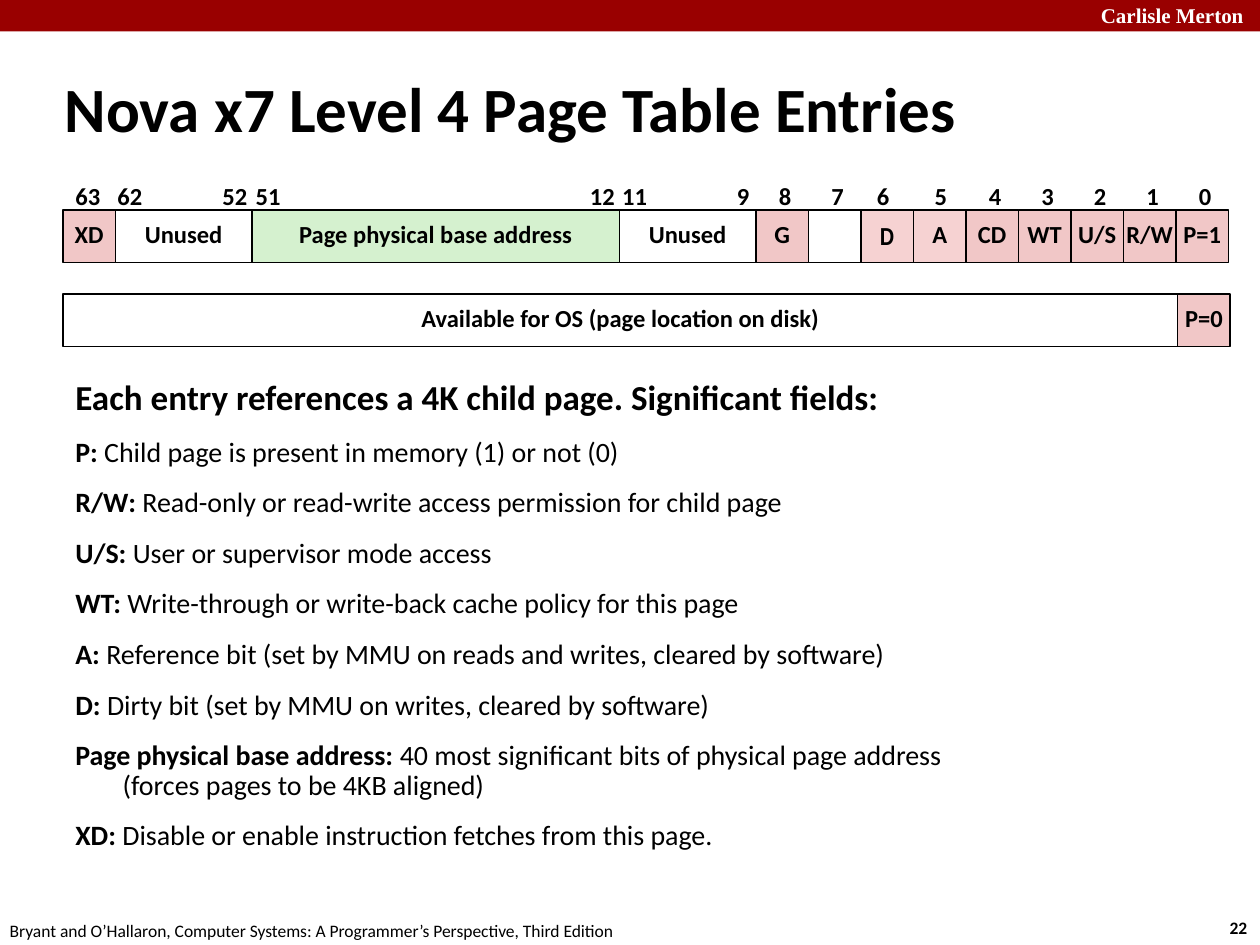
"""Build a slide that explains the fields of a level 4 page table entry."""
from dataclasses import dataclass

import pptx
import pptx.dml.color
import pptx.enum.shapes
import pptx.enum.text
import pptx.util

Pt = pptx.util.Pt
ALIGN = pptx.enum.text.PP_ALIGN
ANCHOR = pptx.enum.text.MSO_ANCHOR
AUTO_SIZE = pptx.enum.text.MSO_AUTO_SIZE


@dataclass(frozen=True)
class Theme:
    """Colours, fonts and type sizes of the slide."""
    banner: str = "990000"
    ink: str = "000000"
    paper: str = "FFFFFF"
    flag: str = "F1C7C7"
    status: str = "F6D2D2"
    address: str = "D5F1CF"
    font: str = "Calibri"
    banner_font: str = "Times New Roman"
    narrow_font: str = "Arial Narrow"
    title: int = 36
    heading: int = 20
    body: int = 16
    label: int = 14
    banner_size: int = 12
    footer: int = 10


THEME = Theme()
LEFT = 36
UNIT = 30
ENTRY_TOP = 120
DISK_TOP = 168
LABEL_TOP = 102
TIGHT = {"line": 0.88, "before": 5.2}

ENTRY_FIELDS = [
    ("XD", 30, THEME.flag),
    ("Unused", 78, THEME.paper),
    ("Page physical base address", 210, THEME.address),
    ("Unused", 78, THEME.paper),
    ("G", 30, THEME.flag),
    ("", 30, THEME.paper),
    ("D", 30, THEME.status),
    ("A", 30, THEME.status),
    ("CD", 30, THEME.flag),
    ("WT", 30, THEME.flag),
    ("U/S", 30, THEME.flag),
    ("R/W", 30, THEME.flag),
    ("P=1", 30, THEME.flag),
]
DISK_FIELDS = [
    ("Available for OS (page location on disk)", 637, THEME.paper),
    ("P=0", 30, THEME.flag),
]
WIDE_BITS = {63: 36, 62: 60, 52: 120, 51: 139, 12: 330, 11: 348.5}
LOW_BITS = {bit: 438 + UNIT * (8 - bit) for bit in range(8, -1, -1)}
BIT_LEFTS = WIDE_BITS | LOW_BITS | {9: 414, 6: 494, 5: 527}

HEADING = "Each entry references a 4K child page. Significant fields:"
DEFINITIONS = [
    ("P:", "Child page is present in memory (1) or not (0)"),
    ("R/W:", "Read-only or read-write access permission for child page"),
    ("U/S:", "User or supervisor mode access"),
    ("WT:", "Write-through or write-back cache policy for this page"),
    ("A:", "Reference bit (set by MMU on reads and writes, cleared by software)"),
    ("D:", "Dirty bit (set by MMU on writes, cleared by software)"),
    ("Page physical base address:",
     "40 most significant bits of physical page address (forces pages to be 4KB aligned)"),
    ("XD:", "Disable or enable instruction fetches from this page."),
]


def rgb(color):
    """Turn a hex string into a colour object."""
    return pptx.dml.color.RGBColor.from_string(color)


def write_span(para, text, *, size, bold=True, font=THEME.font, color=THEME.ink):
    """Add formatted text to a paragraph."""
    span = para.add_run()
    span.text = text
    span.font.size = Pt(size)
    span.font.bold = bold
    span.font.name = font
    span.font.color.rgb = rgb(color)


def format_para(para, *, align=ALIGN.LEFT, line=None, before=None, hanging=0):
    """Set the alignment, spacing and hanging indent of a paragraph."""
    para.alignment = align
    if line is not None:
        para.line_spacing = line
    if before is not None:
        para.space_before = Pt(before)
    if hanging:
        properties = para._p.get_or_add_pPr()
        properties.set("marL", str(Pt(hanging)))
        properties.set("indent", str(-Pt(hanging)))


def add_box(page, left, top, width, height, *, wrap=False, grow=True):
    """Add an empty text box and return its text frame."""
    frame = page.shapes.add_textbox(Pt(left), Pt(top), Pt(width), Pt(height)).text_frame
    frame.word_wrap = wrap
    frame.auto_size = AUTO_SIZE.SHAPE_TO_FIT_TEXT if grow else AUTO_SIZE.NONE
    return frame


def add_rectangle(page, left, top, width, height, fill, outlined=True):
    """Add a filled rectangle, with a thin outline if asked."""
    shape = page.shapes.add_shape(
        pptx.enum.shapes.MSO_SHAPE.RECTANGLE, Pt(left), Pt(top), Pt(width), Pt(height))
    shape.shadow.inherit = False
    shape.fill.solid()
    shape.fill.fore_color.rgb = rgb(fill)
    if outlined:
        shape.line.color.rgb = rgb(THEME.ink)
        shape.line.width = Pt(0.75)
    else:
        shape.line.fill.background()
    return shape


def add_field_row(page, top, fields):
    """Lay the fields of an entry side by side."""
    left = LEFT
    for name, width, fill in fields:
        frame = add_rectangle(page, left, top, width, UNIT, fill).text_frame
        left += width
        if not name:
            continue
        frame.word_wrap = False
        frame.vertical_anchor = ANCHOR.MIDDLE
        para = frame.paragraphs[0]
        dirty = name == "D"
        format_para(para, align=ALIGN.CENTER, **({} if dirty else TIGHT))
        write_span(para, name, size=THEME.label,
                   font=THEME.narrow_font if dirty else THEME.font)


def add_bit_labels(page):
    """Write the bit numbers above the entry."""
    for bit, left in BIT_LEFTS.items():
        width = 28.8 if bit > 9 else 21.6
        para = add_box(page, left, LABEL_TOP, width, 22).paragraphs[0]
        format_para(para, **TIGHT)
        write_span(para, str(bit), size=THEME.label)


def add_definitions(page):
    """List the meaning of each significant field."""
    frame = add_box(page, LEFT, 214, 546, 279, wrap=True)
    spacing = {"line": 0.88, "before": 12, "hanging": 27}
    para = frame.paragraphs[0]
    format_para(para, **spacing)
    write_span(para, HEADING, size=THEME.heading)
    for term, meaning in DEFINITIONS:
        para = frame.add_paragraph()
        format_para(para, **spacing)
        write_span(para, f"{term} ", size=THEME.body)
        write_span(para, meaning, size=THEME.body, bold=False)


def add_frame(page):
    """Add the banner, the footer and the title."""
    add_rectangle(page, 0, 0, 720, 18, THEME.banner, outlined=False)
    banner = add_box(page, 622, -2, 103, 22, wrap=True)
    write_span(banner.paragraphs[0], "Carlisle Merton", size=THEME.banner_size,
               font=THEME.banner_font, color=THEME.paper)
    number = add_box(page, 695.5, 520.5, 27, 19.5)
    write_span(number.paragraphs[0], "22", size=THEME.footer)
    source = add_box(page, -1.5, 522, 366, 19.5)
    write_span(source.paragraphs[0],
               "Bryant and O’Hallaron, Computer Systems: A Programmer’s Perspective, Third Edition",
               size=THEME.footer, bold=False)
    title = add_box(page, 30, 39, 579, 45, wrap=True, grow=False)
    title.vertical_anchor = ANCHOR.MIDDLE
    format_para(title.paragraphs[0], hanging=9)
    write_span(title.paragraphs[0], "Nova x7 Level 4 Page Table Entries", size=THEME.title)


def main():
    """Build the slide and save it."""
    deck = pptx.Presentation()
    deck.slide_width, deck.slide_height = Pt(720), Pt(540)
    page = deck.slides.add_slide(deck.slide_layouts[6])
    add_frame(page)
    add_field_row(page, ENTRY_TOP, ENTRY_FIELDS)
    add_field_row(page, DISK_TOP, DISK_FIELDS)
    add_bit_labels(page)
    add_definitions(page)
    deck.save("out.pptx")


if __name__ == "__main__":
    main()
